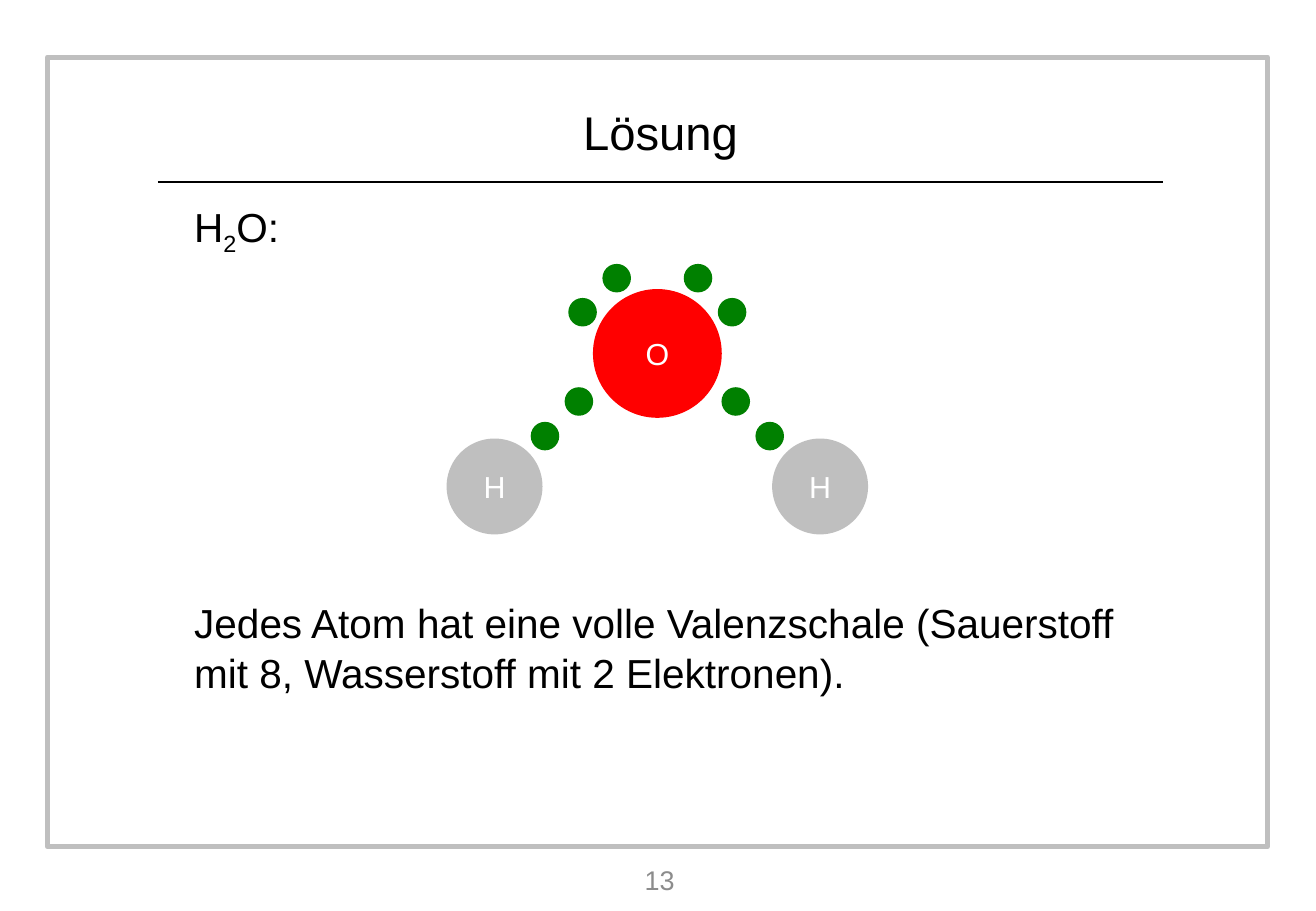
from dataclasses import dataclass

from lxml import etree
from pptx import Presentation, util as u
from pptx.dml.color import RGBColor
from pptx.enum import shapes, text
from pptx.oxml.ns import qn


@dataclass(frozen=True)
class Theme:
    font: str = "Arial"
    ink: str = "000000"
    paper: str = "FFFFFF"
    grey: str = "BFBFBF"
    number_grey: str = "8C8C8C"
    oxygen: str = "FF0000"
    electron: str = "008000"
    title_size: int = 28
    body_size: int = 24
    atom_size: int = 18
    number_size: int = 16


@dataclass(frozen=True)
class Area:
    left: float
    top: float
    width: float
    height: float


@dataclass(frozen=True)
class Ball:
    offset: float
    middle: float
    diameter: float
    fill: str
    label: str = ""


@dataclass(frozen=True)
class Label:
    area: Area
    spans: tuple[str, ...]
    size: int
    color: str
    align: text.PP_ALIGN = text.PP_ALIGN.CENTER
    anchor: text.MSO_ANCHOR = text.MSO_ANCHOR.MIDDLE
    wrap: bool = True
    line_spacing: float = 1.0


THEME = Theme()
WIDTH, HEIGHT = u.Inches(10.83), u.Inches(7.5)
AXIS = 49.95
ELECTRON, HYDROGEN, OXYGEN = 2.17, 7.29, 9.79

FRAME = Area(3.6, 6.27, 92.71, 86.67)
RULE = Area(12, 20, 76.37, 0)

ELECTRON_PLACES = ((5.68, 34.27), (3.09, 30.53), (8.54, 47.87), (5.96, 44.07))
MIRRORED = [Ball(x, y, ELECTRON, THEME.electron) for x, y in ELECTRON_PLACES]
MIRRORED.append(Ball(12.37, 53.4, HYDROGEN, THEME.grey, "H"))
MOLECULE = [Ball(0, 38.8, OXYGEN, THEME.oxygen, "O")]
MOLECULE += [
    Ball(side * ball.offset, ball.middle, ball.diameter, ball.fill, ball.label)
    for ball in MIRRORED
    for side in (-1, 1)
]


def body_label(top: float, height: float, *spans: str) -> Label:
    return Label(Area(13.85, top, 72.67, height), spans, THEME.body_size, THEME.ink,
                 text.PP_ALIGN.LEFT, text.MSO_ANCHOR.TOP, line_spacing=1.03)


LABELS = (
    Label(Area(43.31, 10.53, 13.76, 7.87), ("Lösung",),
          THEME.title_size, THEME.ink, wrap=False),
    body_label(21.33, 6.5, "H", "2", "O:"),
    body_label(64.8, 12, "Jedes Atom hat eine volle Valenzschale "
               "(Sauerstoff mit 8, Wasserstoff mit 2 Elektronen)."),
    Label(Area(38.87, 94, 22.53, 5.2), ("13",), THEME.number_size, THEME.number_grey),
)


def across(share: float) -> int:
    return round(WIDTH * share / 100)


def down(share: float) -> int:
    return round(HEIGHT * share / 100)


def bounds(area: Area) -> tuple[int, int, int, int]:
    return across(area.left), down(area.top), across(area.width), down(area.height)


def style_para(para, size: int, color: str, align: text.PP_ALIGN) -> None:
    para.alignment = align
    para.font.name = THEME.font
    para.font.size = u.Pt(size)
    para.font.color.rgb = RGBColor.from_string(color)


def draw_frame(page) -> None:
    frame = page.shapes.add_shape(shapes.MSO_SHAPE.RECTANGLE, *bounds(FRAME))
    frame.shadow.inherit = False
    frame.fill.background()
    frame.line.color.rgb = RGBColor.from_string(THEME.grey)
    frame.line.width = u.Pt(3)


def draw_rule(page) -> None:
    left, top, width, _ = bounds(RULE)
    rule = page.shapes.add_connector(
        shapes.MSO_CONNECTOR.STRAIGHT, left, top, left + width, top)
    rule.line.color.rgb = RGBColor.from_string(THEME.ink)
    rule.line.width = u.Pt(1.5)
    etree.SubElement(rule._element.spPr, qn("a:effectLst"))


def draw_label(page, label: Label) -> None:
    box = page.shapes.add_textbox(*bounds(label.area))
    frame = box.text_frame
    frame.word_wrap = label.wrap
    frame.vertical_anchor = label.anchor
    para = frame.paragraphs[0]
    para.line_spacing = label.line_spacing
    style_para(para, label.size, label.color, label.align)
    for content in label.spans:
        span = para.add_run()
        span.text = content
        if content == "2":
            span.font._element.set("baseline", "-25000")


def draw_ball(page, ball: Ball) -> None:
    size = across(ball.diameter)
    left = across(AXIS + ball.offset) - size // 2
    top = down(ball.middle) - size // 2
    circle = page.shapes.add_shape(shapes.MSO_SHAPE.OVAL, left, top, size, size)
    circle.shadow.inherit = False
    circle.fill.solid()
    circle.fill.fore_color.rgb = RGBColor.from_string(ball.fill)
    circle.line.fill.background()
    if ball.label:
        circle.text_frame.vertical_anchor = text.MSO_ANCHOR.MIDDLE
        para = circle.text_frame.paragraphs[0]
        para.text = ball.label
        style_para(para, THEME.atom_size, THEME.paper, text.PP_ALIGN.CENTER)


def main() -> None:
    deck = Presentation()
    deck.slide_width, deck.slide_height = WIDTH, HEIGHT
    page = deck.slides.add_slide(deck.slide_layouts[6])
    draw_frame(page)
    draw_rule(page)
    for label in LABELS:
        draw_label(page, label)
    for ball in MOLECULE:
        draw_ball(page, ball)
    deck.save("out.pptx")


if __name__ == "__main__":
    main()
